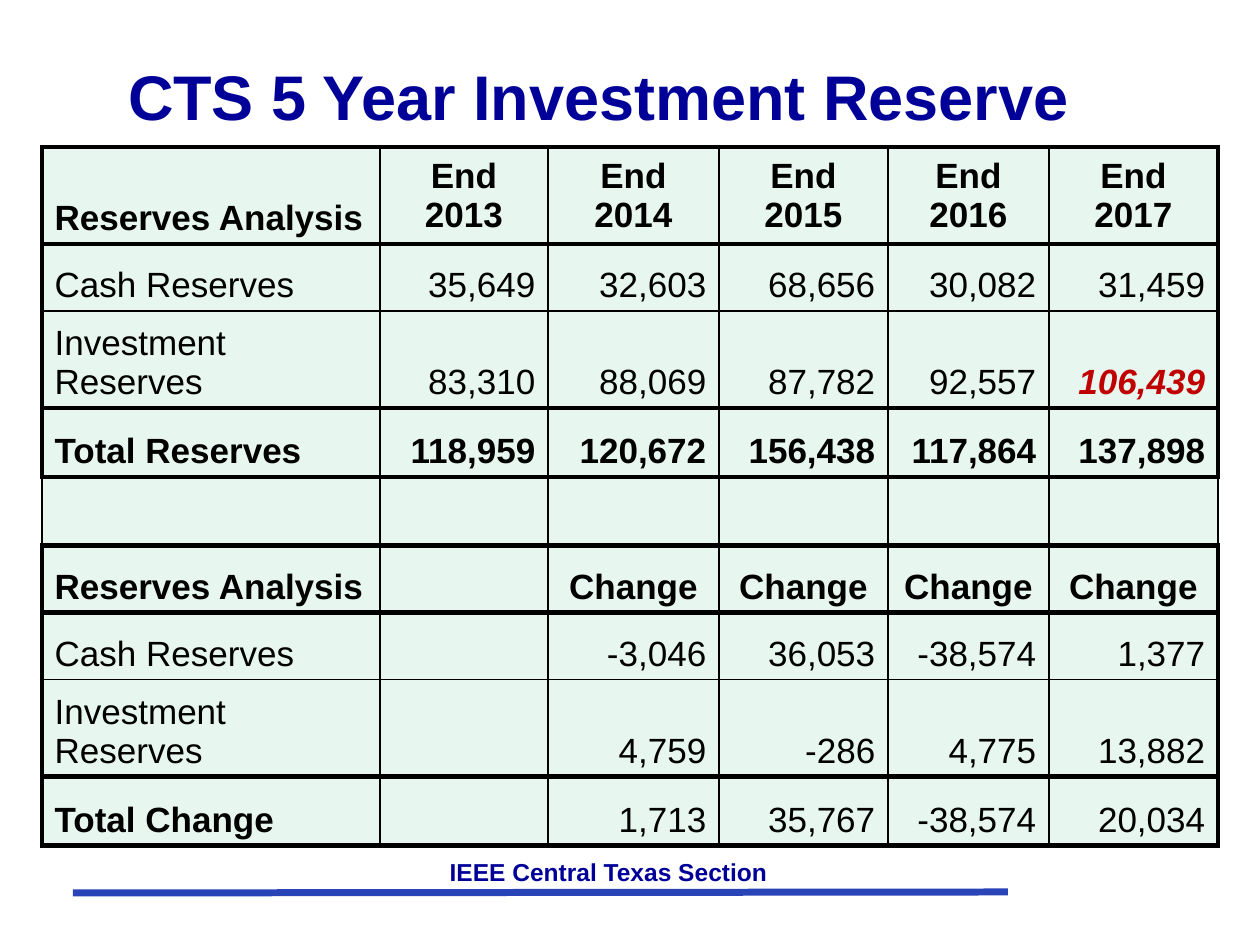
from lxml.etree import SubElement
from pptx import Presentation
from pptx.dml.color import RGBColor
from pptx.enum.shapes import MSO_CONNECTOR
from pptx.enum.text import MSO_ANCHOR, PP_ALIGN
from pptx.oxml.ns import qn
from pptx.util import Emu, Pt

PX = 914400 // 126
FONT = "Arial"
COLORS = {"navy": "000099", "rule": "2944B7", "mint": "E7F6EF",
          "black": "000000", "red": "C00000"}

COLUMN_WIDTHS = [338, 168, 171, 169, 161, 169]
ROW_HEIGHTS = [97, 67, 97, 69, 69, 67, 67, 97, 69]
RESERVES = [
    ["Reserves Analysis", "End 2013", "End 2014", "End 2015", "End 2016", "End 2017"],
    ["Cash Reserves", "35,649", "32,603", "68,656", "30,082", "31,459"],
    ["Investment Reserves", "83,310", "88,069", "87,782", "92,557", "106,439"],
    ["Total Reserves", "118,959", "120,672", "156,438", "117,864", "137,898"],
    ["", "", "", "", "", ""],
    ["Reserves Analysis", "", "Change", "Change", "Change", "Change"],
    ["Cash Reserves", "", "-3,046", "36,053", "-38,574", "1,377"],
    ["Investment Reserves", "", "4,759", "-286", "4,775", "13,882"],
    ["Total Change", "", "1,713", "35,767", "-38,574", "20,034"],
]
YEAR_ROW, TOTAL_ROW, SPACER_ROW, CHANGE_ROW, LAST_ROW = 0, 3, 4, 5, 8
CASH_ROWS = (1, 6)
HIGHLIGHT = (2, 5)
THIN, THICK = 1, 3


def px(value):
    return Emu(value * PX)


def color(name):
    return RGBColor.from_string(COLORS[name])


def style(paragraph, size, color_name, bold=True, italic=False, align=PP_ALIGN.CENTER):
    paragraph.alignment = align
    font = paragraph.font
    font.name, font.size = FONT, Pt(size)
    font.bold, font.italic = bold, italic
    font.color.rgb = color(color_name)


def add_heading(slide, text, box, size, anchor=MSO_ANCHOR.TOP):
    frame = slide.shapes.add_textbox(*map(px, box)).text_frame
    frame.word_wrap = True
    frame.vertical_anchor = anchor
    frame.text = text
    style(frame.paragraphs[0], size, "navy")


def add_rule(slide, start, end):
    rule = slide.shapes.add_connector(MSO_CONNECTOR.STRAIGHT, *map(px, start + end))
    rule.line.color.rgb = color("rule")
    rule.line.width = Pt(4)
    SubElement(rule._element.spPr, qn("a:effectLst"))


def border_widths(row, column):
    """Widths of left, right, top and bottom borders, in points."""
    framed = row != SPACER_ROW
    return {
        "a:lnL": THICK if framed and column == 0 else THIN,
        "a:lnR": THICK if framed and column == len(COLUMN_WIDTHS) - 1 else THIN,
        "a:lnT": THIN if row - 1 in CASH_ROWS else THICK,
        "a:lnB": THIN if row in CASH_ROWS else THICK,
    }


def set_borders(cell, widths):
    properties = cell._tc.get_or_add_tcPr()
    for position, (tag, width) in enumerate(widths.items()):
        line = properties.makeelement(qn(tag), {"w": str(Pt(width))})
        properties.insert(position, line)
        fill = SubElement(line, qn("a:solidFill"))
        SubElement(fill, qn("a:srgbClr"), val=COLORS["black"])


def fill_cell(cell, row, column):
    cell.fill.solid()
    cell.fill.fore_color.rgb = color("mint")
    set_borders(cell, border_widths(row, column))

    is_label = column == 0
    is_year = row == YEAR_ROW and not is_label
    cell.vertical_anchor = MSO_ANCHOR.MIDDLE if is_year else MSO_ANCHOR.BOTTOM
    if is_label:
        align = PP_ALIGN.LEFT
    else:
        align = PP_ALIGN.CENTER if row in (YEAR_ROW, CHANGE_ROW) else PP_ALIGN.RIGHT

    highlighted = (row, column) == HIGHLIGHT
    bold = (row in (YEAR_ROW, TOTAL_ROW, CHANGE_ROW) or highlighted
            or (row == LAST_ROW and is_label))
    cell.text = RESERVES[row][column]
    style(cell.text_frame.paragraphs[0], 20, "red" if highlighted else "black",
          bold, highlighted, align)


def add_reserves_table(slide, left, top):
    table = slide.shapes.add_table(
        len(ROW_HEIGHTS), len(COLUMN_WIDTHS), px(left), px(top),
        px(sum(COLUMN_WIDTHS)), px(sum(ROW_HEIGHTS))).table
    table.first_row = table.horz_banding = False
    for column, width in zip(table.columns, COLUMN_WIDTHS):
        column.width = px(width)
    for row, height in enumerate(ROW_HEIGHTS):
        table.rows[row].height = px(height)
        for column in range(len(COLUMN_WIDTHS)):
            fill_cell(table.cell(row, column), row, column)


def main():
    deck = Presentation()
    deck.slide_width, deck.slide_height = px(1260), px(945)
    slide = deck.slides.add_slide(deck.slide_layouts[6])

    # Footer
    add_rule(slide, (73, 893), (1008, 892))
    add_heading(slide, "IEEE Central Texas Section", (220, 851, 777, 42), 14)

    # Title
    add_heading(slide, "CTS 5 Year Investment Reserve", (63, 53, 1071, 84), 36,
                MSO_ANCHOR.MIDDLE)

    # Reserves and yearly changes
    add_reserves_table(slide, 42, 147)

    deck.save("out.pptx")


if __name__ == "__main__":
    main()
